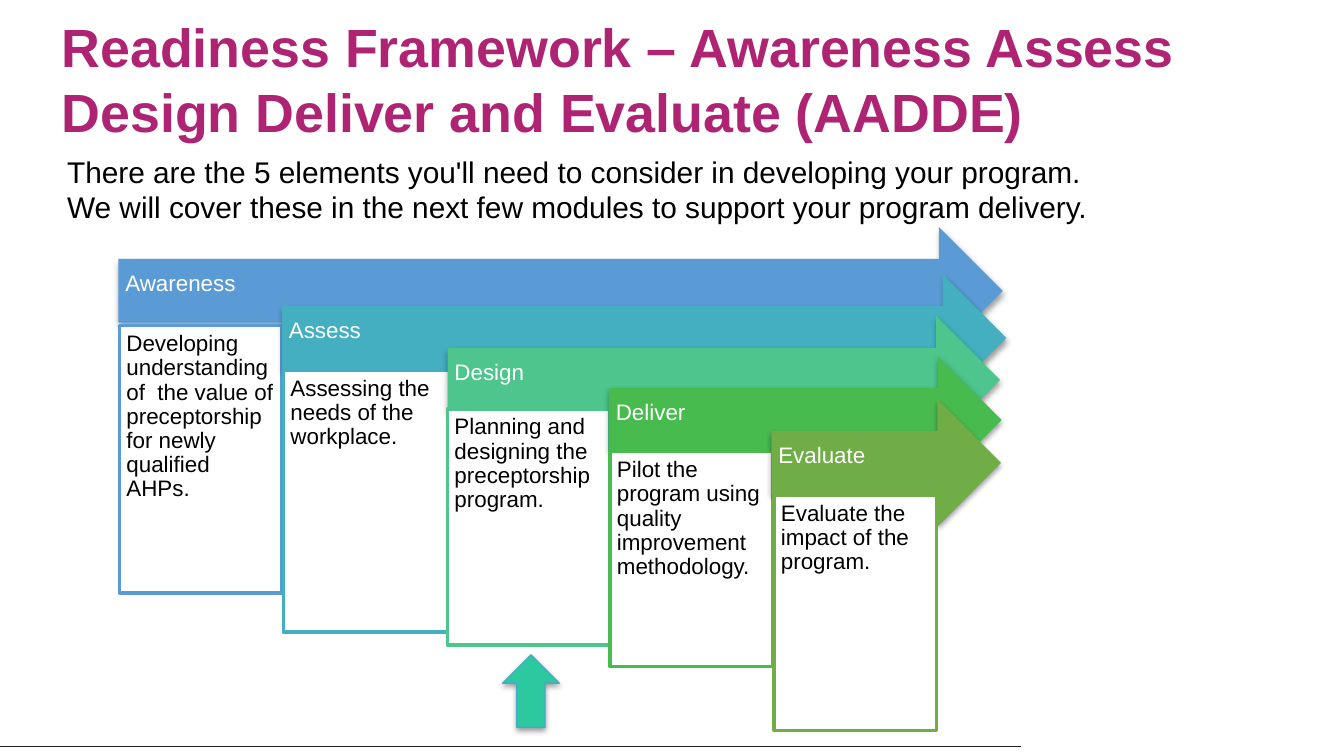
from lxml import etree
from pptx import Presentation
from pptx.dml.color import RGBColor
from pptx.enum.shapes import MSO_CONNECTOR, MSO_SHAPE
from pptx.enum.text import MSO_ANCHOR, MSO_AUTO_SIZE, PP_ALIGN
from pptx.oxml.ns import qn
from pptx.util import Cm, Pt

LINE = MSO_CONNECTOR.STRAIGHT
RECT, RIGHT, UP = MSO_SHAPE.RECTANGLE, MSO_SHAPE.RIGHT_ARROW, MSO_SHAPE.UP_ARROW
TOP, MIDDLE = MSO_ANCHOR.TOP, MSO_ANCHOR.MIDDLE
LEFT, NO_FIT = PP_ALIGN.LEFT, MSO_AUTO_SIZE.NONE

WHITE = RGBColor(0xFF, 0xFF, 0xFF)
BLACK = RGBColor(0, 0, 0)
RULE = RGBColor(0x21, 0x21, 0x21)
MAGENTA = RGBColor(0xAE, 0x24, 0x73)
BLUE = RGBColor(0x5B, 0x9B, 0xD5)
TEAL = RGBColor(0x43, 0xAF, 0xC0)
MINT = RGBColor(0x4D, 0xC5, 0x8D)
GREEN = RGBColor(0x48, 0xBB, 0x4F)
OLIVE = RGBColor(0x70, 0xAD, 0x47)
MARKER = RGBColor(0x2C, 0xC9, 0xA0)
MARKER_EDGE = RGBColor(0x46, 0xAA, 0xC5)

ARROW_HEIGHT = 2.41
PAD = (0.13, 0.13, 0.13, 0.13)
ARROW_PAD = (0.13, 0.13, 0.71, 0.38)

# name, colour, arrow (left, top, length), box (left, top, width, height), text
STAGES = [
    ("Awareness", BLUE, (2.24, 4.29, 16.71), (2.26, 6.15, 3.07, 5.05),
     "Developing understanding of  the value of preceptorship for newly qualified AHPs."),
    ("Assess", TEAL, (5.33, 5.18, 13.69), (5.36, 6.99, 3.2, 4.95),
     "Assessing the needs of the workplace."),
    ("Design", MINT, (8.46, 5.97, 10.44), (8.46, 7.72, 3.07, 4.47),
     "Planning and designing the preceptorship program."),
    ("Deliver", GREEN, (11.51, 6.73, 7.42), (11.53, 8.53, 3.07, 4.06),
     "Pilot the program using quality improvement methodology."),
    ("Evaluate", OLIVE, (14.58, 7.54, 4.34), (14.63, 9.35, 3.07, 4.45),
     "Evaluate the impact of the program."),
]


class SlideBuilder:
    font = "Arial"

    def __init__(self, s):
        self.s = s

    def fill_text(self, tf, lines, size, color, bold=False, spacing=None):
        tf.word_wrap = True
        for i, line in enumerate(lines):
            p = tf.add_paragraph() if i else tf.paragraphs[0]
            p.text, p.alignment = line, LEFT
            p.line_spacing = spacing
            p.font.name, p.font.size = self.font, Pt(size)
            p.font.bold, p.font.color.rgb = bold, color

    def title(self, text, box):
        sp = self.s.shapes.title
        sp.left, sp.top, sp.width, sp.height = map(Cm, box)
        tf = sp.text_frame
        tf.auto_size, tf.vertical_anchor = NO_FIT, MIDDLE
        self.fill_text(tf, [text], 28.8, MAGENTA, bold=True)

    def text(self, lines, box):
        sp = self.s.shapes.add_textbox(*map(Cm, box))
        self.fill_text(sp.text_frame, lines, 16, BLACK)

    def shape(self, kind, box, fill, line=None, width=0.75):
        sp = self.s.shapes.add_shape(kind, *map(Cm, box))
        sp.shadow.inherit = False
        sp.fill.solid()
        sp.fill.fore_color.rgb = fill
        if line is None:
            sp.line.fill.background()
        else:
            sp.line.color.rgb, sp.line.width = line, Pt(width)
        return sp

    def label(self, sp, text, color, anchor, pad):
        tf = sp.text_frame
        tf.vertical_anchor = anchor
        tf.margin_left, tf.margin_top, tf.margin_right, tf.margin_bottom = map(Cm, pad)
        self.fill_text(tf, [text], 12, color, spacing=0.9)

    def shadow(self, sp):
        effects = sp._element.spPr.find(qn("a:effectLst"))
        outer = etree.SubElement(effects, qn("a:outerShdw"), blurRad=str(Pt(3.1)),
                                 dist=str(Pt(1.6)), dir="5400000", rotWithShape="0")
        color = etree.SubElement(outer, qn("a:srgbClr"), val=str(BLACK))
        etree.SubElement(color, qn("a:alpha"), val="38000")

    def stage(self, name, color, arrow, box, text):
        sp = self.shape(RIGHT, (*arrow, ARROW_HEIGHT), color)
        self.shadow(sp)
        self.label(sp, name, WHITE, MIDDLE, ARROW_PAD)
        sp = self.shape(RECT, box, WHITE, color, 2)
        self.label(sp, text, BLACK, TOP, PAD)

    def marker(self, box):
        self.shadow(self.shape(UP, box, MARKER, MARKER_EDGE))

    def rule(self, x1, x2, y):
        c = self.s.shapes.add_connector(LINE, Cm(x1), Cm(y), Cm(x2), Cm(y))
        c.line.color.rgb, c.line.width = RULE, Pt(0.75)
        etree.SubElement(c._element.spPr, qn("a:effectLst"))


def main():
    prs = Presentation()
    prs.slide_width, prs.slide_height = Cm(25.4), Cm(14.28)
    b = SlideBuilder(prs.slides.add_slide(prs.slide_layouts[5]))

    # Footer rule and headings
    b.rule(0, 19.3, 14.1)
    b.title("Readiness Framework – Awareness Assess Design Deliver and Evaluate (AADDE)",
            (0.91, 0.03, 24.49, 2.9))
    b.text(["There are the 5 elements you'll need to consider in developing your program.",
            "We will cover these in the next few modules to support your program delivery."],
           (1.02, 2.77, 23.98, 1.63))

    # Overlapping stages
    for stage in STAGES:
        b.stage(*stage)

    # Pointer to the current stage
    b.marker((9.5, 12.37, 1.07, 1.37))

    prs.save("out.pptx")


if __name__ == "__main__":
    main()
